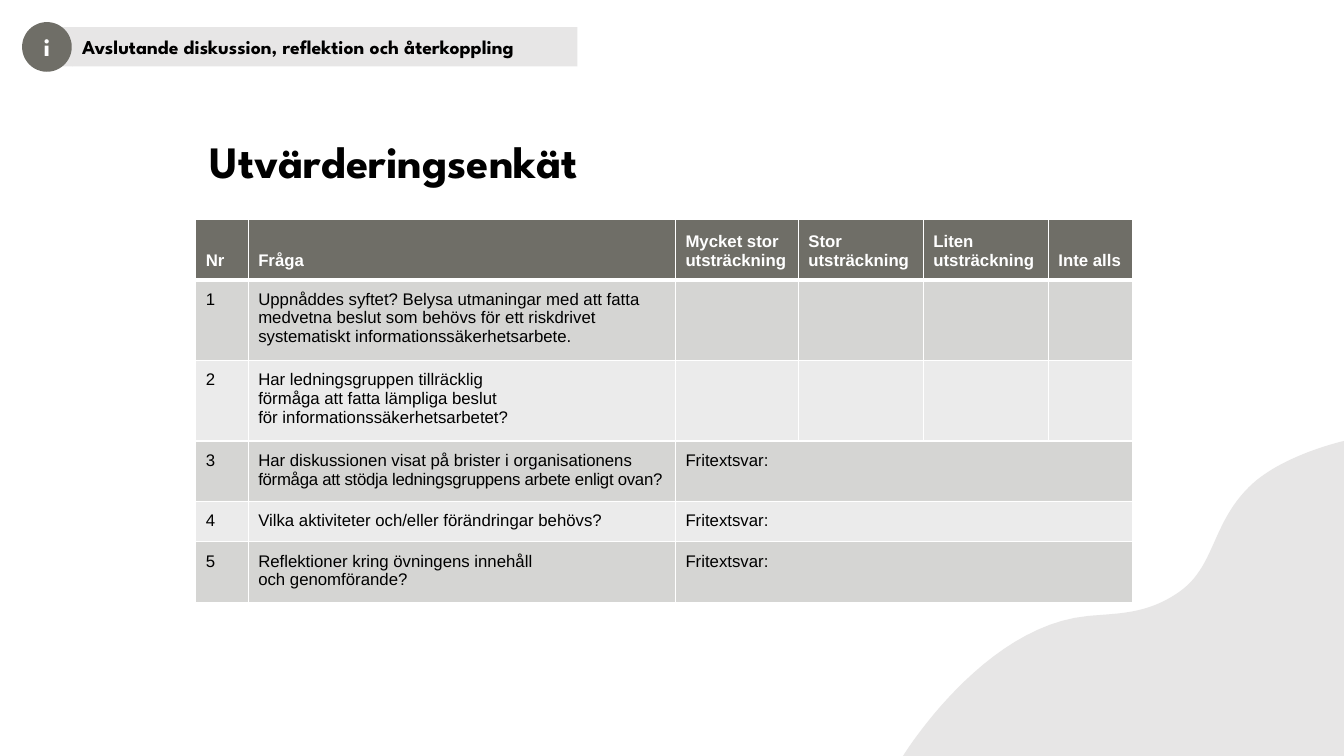
"""Build the slide with the evaluation survey table."""
from dataclasses import dataclass

from lxml.etree import SubElement
from pptx import Presentation
from pptx.dml.color import RGBColor
from pptx.enum.shapes import MSO_SHAPE
from pptx.enum.text import MSO_ANCHOR, MSO_AUTO_SIZE, PP_ALIGN
from pptx.oxml.ns import qn
from pptx.shapes.autoshape import Shape
from pptx.slide import Slide
from pptx.table import Table, _Cell
from pptx.text.text import _Paragraph
from pptx.util import Pt

COLOURS = {
    "olive": "6F6E67",
    "mist": "E7E6E6",
    "odd": "D5D5D3",
    "even": "EBEBEB",
    "white": "FFFFFF",
    "black": "000000",
}
DISPLAY_FONT = "League Spartan"
TABLE_FONT = "Arial"
HEADINGS = ("Nr", "Fråga", "Mycket stor utsträckning", "Stor utsträckning",
            "Liten utsträckning", "Inte alls")
COLUMN_WIDTHS = (37.5, 305.2, 87.8, 89.3, 89.3, 60.5)
HEADING_HEIGHT = 43.2
CELL_MARGIN = 7.2
BLOB_START = (645, 540)
BLOB_CURVES = (
    ((645, 540), (702, 447), (777, 440)),
    ((798, 438), (819, 439), (842, 423)),
    ((868, 405), (865, 375), (892, 348)),
    ((915, 325), (960, 315), (960, 315)),
)
CURVE_STEPS = 24


@dataclass(frozen=True)
class Panel:
    """A filled preset shape in the page heading."""

    kind: MSO_SHAPE
    left: float
    top: float
    width: float
    height: float
    colour: str
    text: str = ""
    size: float = 14
    text_colour: str = "black"
    align: PP_ALIGN = PP_ALIGN.LEFT


@dataclass(frozen=True)
class Question:
    """One survey row, answered by rating or in free text."""

    spans: tuple[str, ...]
    height: float
    free_text: bool = False


PANELS = (
    Panel(MSO_SHAPE.RECTANGLE, 33.8, 19.4, 18, 28.1, "mist"),
    Panel(MSO_SHAPE.OVAL, 15.8, 15.8, 35.5, 35.5, "olive", "i", 18, "white", PP_ALIGN.CENTER),
    Panel(MSO_SHAPE.RECTANGLE, 51.5, 19.4, 361, 28.1, "mist",
          "Avslutande diskussion, reflektion och återkoppling"),
)
QUESTIONS = (
    Question(("Uppnåddes syftet? Belysa utmaningar med att fatta medvetna beslut som behövs "
              "för ett riskdrivet systematiskt informationssäkerhetsarbete.",), 57.6),
    Question(("Har ledningsgruppen tillräcklig\vförmåga att fatta lämpliga beslut\v"
              "för informationssäkerhetsarbetet?",), 57.6),
    Question(("Har diskussionen visat på brister i organisationens ",
              "förmåga att stödja ledningsgruppens arbete enligt ovan?"), 43.2, True),
    Question(("Vilka aktiviteter och/eller förändringar behövs?",), 28.8, True),
    Question(("Reflektioner kring övningens innehåll\voch genomförande?",), 43.2, True),
)


def rgb(name: str) -> RGBColor:
    """Look up a named colour."""
    return RGBColor.from_string(COLOURS[name])


def set_font(para: _Paragraph, face: str, size: float, colour: str, bold: bool) -> None:
    """Format a whole paragraph."""
    para.font.name = face
    para.font.size = Pt(size)
    para.font.bold = bold
    para.font.color.rgb = rgb(colour)


def paint(shape: Shape, colour: str) -> None:
    """Give a shape a plain fill without line or shadow."""
    shape.shadow.inherit = False
    shape.fill.solid()
    shape.fill.fore_color.rgb = rgb(colour)
    shape.line.fill.background()


def draw_blob(page: Slide) -> None:
    """Draw the wavy corner from sampled cubic curves."""
    points = []
    start = BLOB_START
    for first, second, end in BLOB_CURVES:
        for step in range(1, CURVE_STEPS + 1):
            t = step / CURVE_STEPS
            weights = ((1 - t) ** 3, 3 * t * (1 - t) ** 2, 3 * t ** 2 * (1 - t), t ** 3)
            corners = (start, first, second, end)
            points.append(tuple(
                Pt(sum(weight * corner[axis] for weight, corner in zip(weights, corners)))
                for axis in (0, 1)))
        start = end
    points.append((Pt(960), Pt(540)))
    builder = page.shapes.build_freeform(Pt(BLOB_START[0]), Pt(BLOB_START[1]))
    builder.add_line_segments(points, close=True)
    paint(builder.convert_to_shape(), "mist")


def draw_panel(page: Slide, panel: Panel) -> None:
    """Draw one heading shape with its text."""
    box = page.shapes.add_shape(panel.kind, Pt(panel.left), Pt(panel.top),
                                Pt(panel.width), Pt(panel.height))
    paint(box, panel.colour)
    if panel.text:
        frame = box.text_frame
        frame.word_wrap = True
        frame.vertical_anchor = MSO_ANCHOR.MIDDLE
        para = frame.paragraphs[0]
        para.text = panel.text
        para.alignment = panel.align
        set_font(para, DISPLAY_FONT, panel.size, panel.text_colour, True)


def fill_title(page: Slide) -> None:
    """Place and format the slide title."""
    title = page.shapes.title
    title.left, title.top, title.width, title.height = Pt(142.5), Pt(98.6), Pt(675.4), Pt(76.3)
    frame = title.text_frame
    frame.auto_size = MSO_AUTO_SIZE.NONE
    frame.vertical_anchor = MSO_ANCHOR.BOTTOM
    frame.margin_bottom = Pt(40.5)
    para = frame.paragraphs[0]
    para.text = "Utvärderingsenkät"
    para.alignment = PP_ALIGN.LEFT
    para.line_spacing = 0.9
    set_font(para, DISPLAY_FONT, 32, "black", True)


def style_cell(cell: _Cell, colour: str, top: float, bottom: float) -> None:
    """Set the margins, white borders and fill of a cell."""
    cell.margin_left = cell.margin_right = Pt(CELL_MARGIN)
    cell.margin_top = cell.margin_bottom = Pt(CELL_MARGIN)
    properties = cell._tc.get_or_add_tcPr()
    for side, width in (("L", 1), ("R", 1), ("T", top), ("B", bottom)):
        border = SubElement(properties, qn(f"a:ln{side}"), w=str(Pt(width)))
        SubElement(SubElement(border, qn("a:solidFill")), qn("a:srgbClr"), val=COLOURS["white"])
    cell.fill.solid()
    cell.fill.fore_color.rgb = rgb(colour)


def write_cell(cell: _Cell, spans: tuple[str, ...], colour: str, bold: bool = False) -> None:
    """Write text in a cell, with any second span slightly condensed."""
    para = cell.text_frame.paragraphs[0]
    para.text = spans[0]
    for text in spans[1:]:
        span = para.add_run()
        span.text = text
        span._r.get_or_add_rPr().set("spc", "-20")
    set_font(para, TABLE_FONT, 12, colour, bold)


def write_questions(table: Table) -> None:
    """Fill the survey rows below the heading row."""
    last = len(HEADINGS) - 1
    for number, question in enumerate(QUESTIONS, 1):
        table.rows[number].height = Pt(question.height)
        for column in range(len(HEADINGS)):
            style_cell(table.cell(number, column), "odd" if number % 2 else "even",
                       3 if number == 1 else 1, 1)
        write_cell(table.cell(number, 0), (str(number),), "black")
        write_cell(table.cell(number, 1), question.spans, "black")
        if question.free_text:
            table.cell(number, 2).merge(table.cell(number, last))
            write_cell(table.cell(number, 2), ("Fritextsvar:",), "black")


def draw_survey(page: Slide) -> None:
    """Draw the survey table."""
    height = HEADING_HEIGHT + sum(question.height for question in QUESTIONS)
    table = page.shapes.add_table(len(QUESTIONS) + 1, len(HEADINGS), Pt(139.8), Pt(156.6),
                                  Pt(sum(COLUMN_WIDTHS)), Pt(height)).table
    table.horz_banding = False
    table.rows[0].height = Pt(HEADING_HEIGHT)
    for column, (heading, width) in enumerate(zip(HEADINGS, COLUMN_WIDTHS)):
        table.columns[column].width = Pt(width)
        cell = table.cell(0, column)
        style_cell(cell, "olive", 1, 3)
        cell.vertical_anchor = MSO_ANCHOR.BOTTOM
        write_cell(cell, (heading,), "white", True)
    write_questions(table)


def main() -> None:
    """Build and save the deck."""
    deck = Presentation()
    deck.slide_width, deck.slide_height = Pt(960), Pt(540)
    page = deck.slides.add_slide(deck.slide_layouts[5])
    draw_blob(page)
    for panel in PANELS:
        draw_panel(page, panel)
    fill_title(page)
    draw_survey(page)
    deck.save("out.pptx")


if __name__ == "__main__":
    main()
